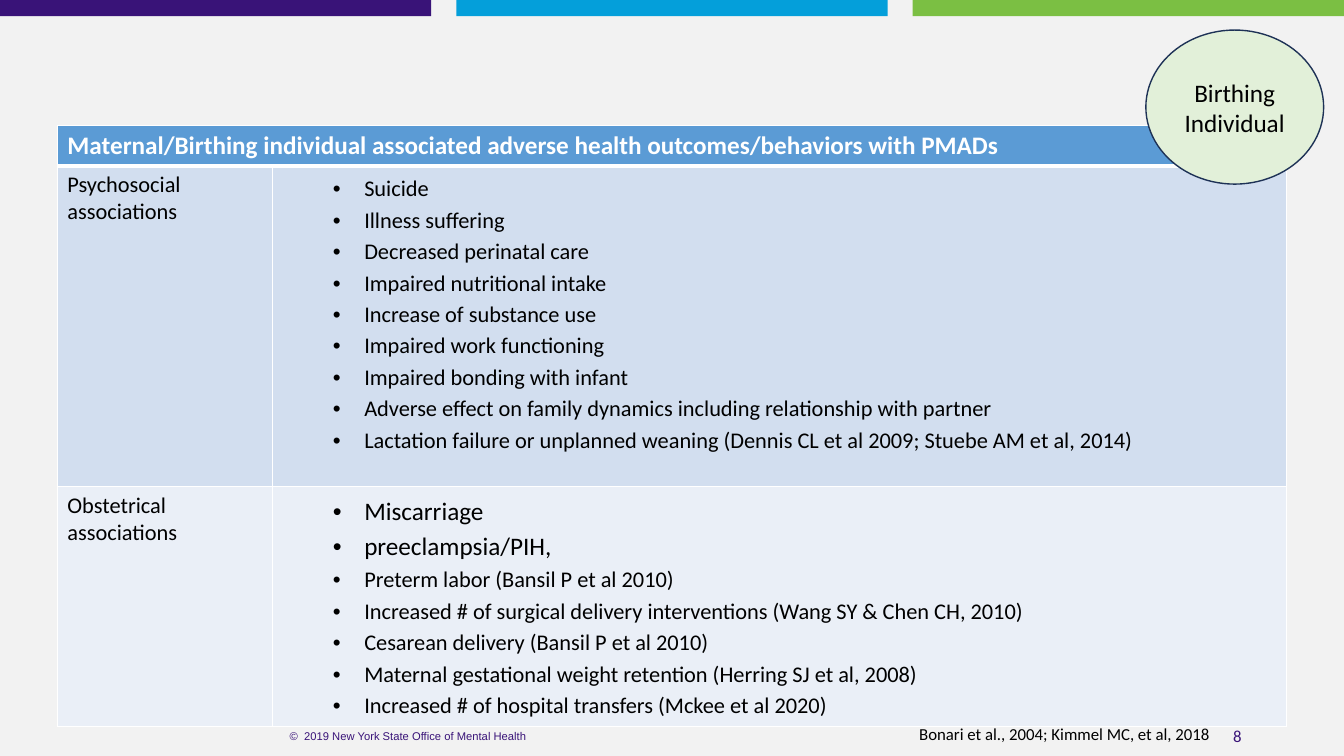
from pptx import Presentation
from pptx.util import Pt
from pptx.dml.color import RGBColor
from pptx.enum.shapes import MSO_SHAPE as Shape
from pptx.enum.text import MSO_ANCHOR as Anchor, PP_ALIGN as Align
from pptx.oxml.ns import qn
from lxml.etree import SubElement as sub

WIDE, HIGH = 960, 540
BLACK, WHITE, PURPLE = "000000", "FFFFFF", "391378"
HEAD = "Maternal/Birthing individual associated adverse health outcomes/behaviors with PMADs"
GROUPS = [
    ("Psychosocial associations", "D2DEEF", 229, [
        ("Suicide", 16),
        ("Illness suffering", 16),
        ("Decreased perinatal care", 16),
        ("Impaired nutritional intake", 16),
        ("Increase of substance use", 16),
        ("Impaired work functioning", 16),
        ("Impaired bonding with infant", 16),
        ("Adverse effect on family dynamics including relationship with partner", 16),
        ("Lactation failure or unplanned weaning (Dennis CL et al 2009; Stuebe AM et al, 2014)", 16),
    ]),
    ("Obstetrical associations", "EAEFF7", 171, [
        ("Miscarriage", 18),
        ("preeclampsia/PIH,", 18),
        ("Preterm labor (Bansil P et al 2010)", 16),
        ("Increased # of surgical delivery interventions (Wang SY & Chen CH, 2010)", 16),
        ("Cesarean delivery (Bansil P et al 2010)", 16),
        ("Maternal gestational weight retention (Herring SJ et al, 2008)", 16),
        ("Increased # of hospital transfers (Mckee et al 2020)", 16),
    ]),
]


def color(code):
    return RGBColor.from_string(code)


def style(para, size, code=BLACK, face="Calibri", bold=False):
    for run in para.runs:
        run.font.size = Pt(size)
        run.font.name = face
        run.font.bold = bold
        run.font.color.rgb = color(code)


def shape(slide, kind, box, fill):
    item = slide.shapes.add_shape(kind, *map(Pt, box))
    item.shadow.inherit = False
    item.fill.solid()
    item.fill.fore_color.rgb = color(fill)
    item.line.fill.background()
    return item


def label(slide, box, text, size, code, face, align, anchor):
    frame = slide.shapes.add_textbox(*map(Pt, box)).text_frame
    frame.word_wrap = True
    frame.vertical_anchor = anchor
    frame.text = text
    frame.paragraphs[0].alignment = align
    style(frame.paragraphs[0], size, code, face)


def bands(slide, left, top, width, height):
    gap = 18
    part = (width - 2 * gap) / 3
    for num, fill in enumerate((PURPLE, "049FDA", "7BBF43")):
        shape(slide, Shape.RECTANGLE, (left + num * (part + gap), top, part, height), fill)


def paint(cell, fill, base=1):
    props = cell._tc.get_or_add_tcPr()
    for side in "LRTB":
        line = sub(props, qn("a:ln" + side), w=str(Pt(base if side == "B" else 1)))
        sub(sub(line, qn("a:solidFill")), qn("a:srgbClr"), val=WHITE)
    cell.fill.solid()
    cell.fill.fore_color.rgb = color(fill)


def bullets(cell, items):
    cell.text = "\n".join(text for text, size in items)
    for para, (text, size) in zip(cell.text_frame.paragraphs, items):
        props = para._p.get_or_add_pPr()
        props.set("lvl", "1")
        props.set("marL", str(Pt(58.5)))
        props.set("indent", str(Pt(-22.5)))
        sub(props, qn("a:buFont"), typeface="Arial")
        sub(props, qn("a:buChar"), char="•")
        para.line_spacing = 1.15
        style(para, size)


def grid(slide, left, top, width, height):
    first = 153.5
    table = slide.shapes.add_table(len(GROUPS) + 1, 2, *map(Pt, (left, top, width, height))).table
    table.columns[0].width = Pt(first)
    table.columns[1].width = Pt(width - first)
    table.rows[0].height = Pt(height - sum(group[2] for group in GROUPS))
    title = table.cell(0, 0)
    title.merge(table.cell(0, 1))
    title.text = HEAD
    style(title.text_frame.paragraphs[0], 18, WHITE, bold=True)
    for cell in table.rows[0].cells:
        paint(cell, "5B9BD5", 3)
    for row, (name, fill, tall, items) in enumerate(GROUPS, 1):
        table.rows[row].height = Pt(tall)
        side, body = table.rows[row].cells
        side.text = name
        style(side.text_frame.paragraphs[0], 16)
        bullets(body, items)
        paint(side, fill)
        paint(body, fill)


def badge(slide, *box):
    oval = shape(slide, Shape.OVAL, box, "E2F0D9")
    oval.line.color.rgb = color("1E3256")
    oval.line.width = Pt(1)
    frame = oval.text_frame
    frame.word_wrap = True
    frame.vertical_anchor = Anchor.MIDDLE
    frame.text = "Birthing Individual"
    frame.paragraphs[0].alignment = Align.CENTER
    style(frame.paragraphs[0], 18)


def footer(slide, left, top, width, height):
    label(slide, (left + 130.5, top, 322, height), "©  2019 New York State Office of Mental Health",
          8, PURPLE, "Arial", Align.CENTER, Anchor.MIDDLE)
    label(slide, (left + 678, top, 216, height), "8",
          12, PURPLE, "Calibri", Align.RIGHT, Anchor.MIDDLE)
    label(slide, (left + 649.5, top + 2.5, 224, 22), "Bonari et al., 2004; Kimmel MC, et al, 2018",
          12, BLACK, "Calibri", Align.LEFT, Anchor.TOP)


def main():
    deck = Presentation()
    deck.slide_width, deck.slide_height = Pt(WIDE), Pt(HIGH)
    slide = deck.slides.add_slide(deck.slide_layouts[6])
    back = slide.background.fill
    back.solid()
    back.fore_color.rgb = color("F2F2F2")
    bands(slide, 0, 0, WIDE, 11.5)
    grid(slide, 41, 89.5, 878, 428.5)
    badge(slide, 818.5, 21.5, 127, 110)
    footer(slide, 0, 511, WIDE, 29)
    deck.save("out.pptx")


if __name__ == "__main__":
    main()
